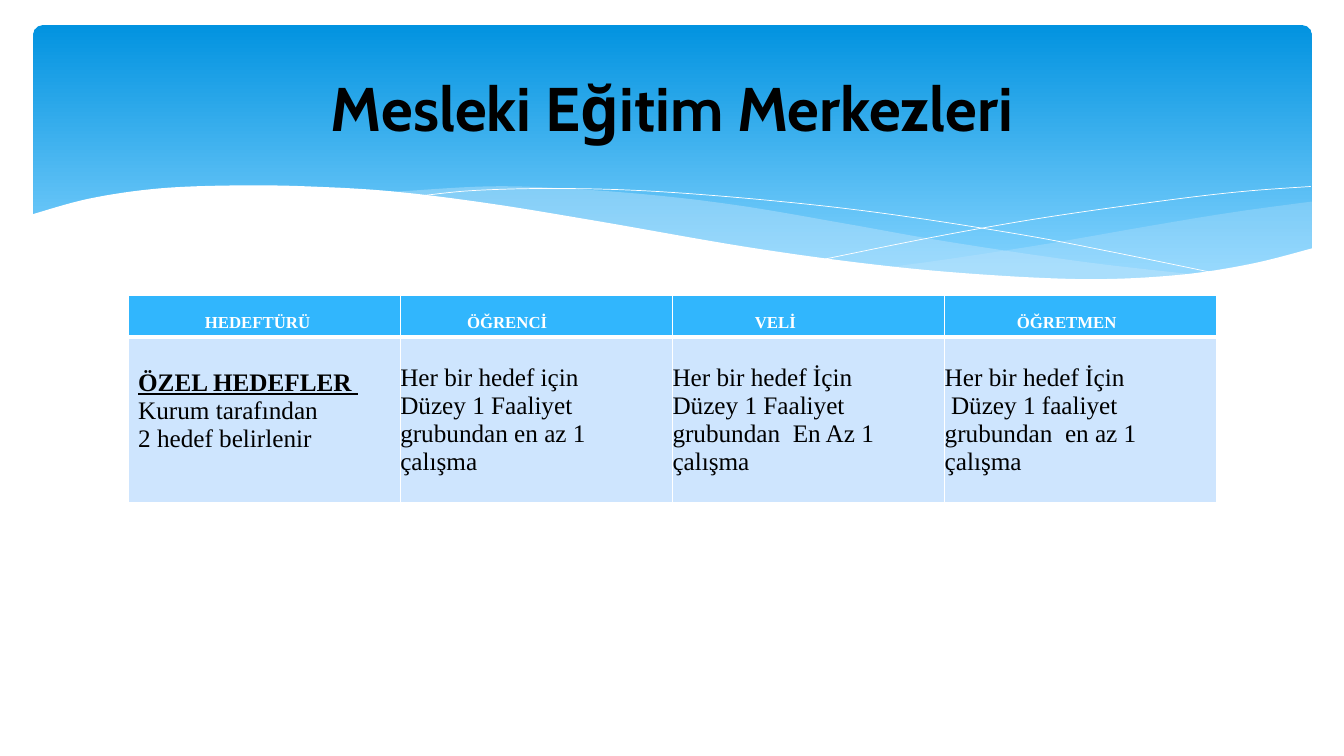
"""Build a slide with a wave banner, a title and a table of goals for vocational centres."""
import dataclasses
import typing

import lxml.etree
import pptx
import pptx.dml.color
import pptx.enum.dml
import pptx.enum.shapes
import pptx.enum.text
import pptx.oxml.ns
import pptx.util

Inches = pptx.util.Inches
Curve = list[tuple[float, float]]
WHITE, BLACK = "FFFFFF", "000000"
HEADER_BLUE, BODY_BLUE, MIST = "31B6FD", "CEE5FE", "C6E7FC"
SERIF = "Times New Roman"
CURVE_STEPS = 8


@dataclasses.dataclass
class Wave:
    curves: list[Curve]
    fill: str | None = None
    opacity: int = 100


@dataclasses.dataclass
class Column:
    heading: str
    heading_right: float
    lines: list[str]
    body_left: float = 0
    body_top: float = 0.27
    lead_bold: bool = False


WAVES = [
    Wave([
        [(13.01, 2), (12.27, 2.1), (11.47, 2.23), (10.38, 2.42), (9.41, 2.57), (8.82, 2.65)],
        [(8.82, 2.65), (9.58, 2.72), (10.41, 2.77), (11.13, 2.77), (11.86, 2.72),
         (12.47, 2.62), (13.01, 2.47)],
    ], MIST, 29),
    Wave([
        [(11.9, 2.73), (10.76, 2.6), (9.41, 2.4), (8.39, 2.22), (7.4, 2.05), (6.52, 1.94),
         (5.6, 1.87), (4.82, 1.85), (3.82, 1.91)],
        [(3.82, 1.91), (4.83, 2.03), (5.99, 2.22), (7.06, 2.4), (8.02, 2.55), (9.07, 2.68),
         (9.98, 2.76), (10.9, 2.78), (11.9, 2.73)],
    ], MIST, 40),
    Wave([[(4.12, 1.95), (4.7, 1.89), (5.55, 1.87), (6.52, 1.9), (7.75, 2), (8.86, 2.13),
           (10.14, 2.33), (11.08, 2.51), (12.1, 2.72)]]),
    Wave([[(8.18, 2.57), (9.27, 2.35), (10.35, 2.16), (11.55, 1.99), (12.32, 1.9), (13, 1.85)]]),
    Wave([
        [(13.03, 2.46), (12.4, 2.62), (11.67, 2.73), (10.78, 2.77), (9.69, 2.72), (8.63, 2.62),
         (7.4, 2.45), (5.96, 2.2), (4.86, 2.02), (3.9, 1.9), (3.06, 1.85), (2.35, 1.84),
         (1.58, 1.87), (0.89, 1.97), (0.31, 2.13)],
        [(0.31, 3.29)],
        [(13.03, 3.29)],
    ], WHITE),
]

COLUMNS = [
    Column("HEDEFTÜRÜ", 0.13, ["ÖZEL HEDEFLER ", "Kurum tarafından", "2 hedef belirlenir"],
           0.1, 0.32, True),
    Column("ÖĞRENCİ", 0.58, ["Her bir hedef için", "Düzey 1 Faaliyet grubundan en az 1 çalışma"]),
    Column("VELİ", 0.66, ["Her bir hedef İçin", "Düzey 1 Faaliyet grubundan  En Az 1 çalışma"]),
    Column("ÖĞRETMEN", 0.28,
           ["Her bir hedef İçin", " Düzey 1 faaliyet grubundan  en az 1 çalışma"]),
]


def color(code: str) -> pptx.dml.color.RGBColor:
    return pptx.dml.color.RGBColor.from_string(code)


def add_node(parent: typing.Any, tag: str, **attributes: str) -> typing.Any:
    return lxml.etree.SubElement(parent, pptx.oxml.ns.qn(tag), attributes)


def write(para: typing.Any, text: str, *, size: float, font: str = SERIF, tint: str = BLACK,
          bold: bool = False, underline: bool = False, centered: bool = False) -> None:
    align = pptx.enum.text.PP_ALIGN
    para.alignment = align.CENTER if centered else align.LEFT
    span = para.add_run()
    span.text = text
    span.font.size = pptx.util.Pt(size)
    span.font.name = font
    span.font.bold = bold
    span.font.underline = underline
    span.font.color.rgb = color(tint)


def smooth(points: Curve) -> Curve:
    padded = [points[0], *points, points[-1]]
    result = [points[0]]
    for before, start, end, after in zip(padded, padded[1:], padded[2:], padded[3:]):
        for step in range(1, CURVE_STEPS + 1):
            t = step / CURVE_STEPS
            x, y = (
                (2 * b + (c - a) * t + (2 * a - 5 * b + 4 * c - d) * t ** 2
                 + (3 * b - a - 3 * c + d) * t ** 3) / 2
                for a, b, c, d in zip(before, start, end, after)
            )
            result.append((x, y))
    return result


def draw_wave(page: typing.Any, wave: Wave) -> None:
    points = [(Inches(x), Inches(y)) for curve in wave.curves for x, y in smooth(curve)]
    builder = page.shapes.build_freeform(*points[0])
    builder.add_line_segments(points[1:], close=wave.fill is not None)
    shape = builder.convert_to_shape()
    shape.shadow.inherit = False
    if wave.fill is None:
        shape.fill.background()
        shape.line.color.rgb = color(WHITE)
        shape.line.width = pptx.util.Pt(0.5)
        return
    shape.line.fill.background()
    shape.fill.solid()
    shape.fill.fore_color.rgb = color(wave.fill)
    for tone in shape.fill._xPr.iterfind(".//" + pptx.oxml.ns.qn("a:srgbClr")):
        add_node(tone, "a:alpha", val=str(wave.opacity * 1000))


def draw_banner(page: typing.Any) -> None:
    banner = page.shapes.add_shape(pptx.enum.shapes.MSO_SHAPE.ROUNDED_RECTANGLE,
                                   Inches(0.33), Inches(0.25), Inches(12.68), Inches(2.7))
    banner.adjustments[0] = 0.034
    banner.shadow.inherit = False
    banner.line.fill.background()
    banner.fill.gradient()
    banner.fill.gradient_angle = 270
    stops = banner.fill.gradient_stops
    for stop, position, tint in zip(stops, (0, 0.9), ("0293E0", "83D3FE")):
        stop.position = position
        stop.color.rgb = color(tint)
    for wave in WAVES:
        draw_wave(page, wave)


def style_cell(cell: typing.Any, fill: str, *, left: float = 0, right: float = 0,
               top: float = 0, border_top: int = 1, border_bottom: int = 1) -> None:
    cell.margin_left, cell.margin_right = Inches(left), Inches(right)
    cell.margin_top, cell.margin_bottom = Inches(top), 0
    cell.vertical_anchor = pptx.enum.text.MSO_ANCHOR.TOP
    properties = cell._tc.get_or_add_tcPr()
    for side, width in zip("LRTB", (1, 1, border_top, border_bottom)):
        border = add_node(properties, f"a:ln{side}", w=str(pptx.util.Pt(width)))
        add_node(add_node(border, "a:solidFill"), "a:srgbClr", val=WHITE)
    cell.fill.solid()
    cell.fill.fore_color.rgb = color(fill)


def draw_table(page: typing.Any) -> None:
    frame = page.shapes.add_table(2, len(COLUMNS), Inches(1.27), Inches(2.93),
                                  Inches(10.8), Inches(2.06))
    table = frame.table
    table.horz_banding = False
    table.rows[0].height, table.rows[1].height = Inches(0.41), Inches(1.65)
    for index, column in enumerate(COLUMNS):
        heading, body = table.cell(0, index), table.cell(1, index)
        style_cell(heading, HEADER_BLUE, right=column.heading_right, top=0.18, border_bottom=3)
        write(heading.text_frame.paragraphs[0], column.heading, size=12, tint=WHITE,
              bold=True, centered=True)
        style_cell(body, BODY_BLUE, left=column.body_left, right=0.2, top=column.body_top,
                   border_top=3)
        for number, line in enumerate(column.lines):
            box = body.text_frame
            para = box.add_paragraph() if number else box.paragraphs[0]
            lead = column.lead_bold and number == 0
            write(para, line, size=18, bold=lead, underline=lead)


def place_title(page: typing.Any) -> None:
    title = page.shapes.title
    title.left, title.top = Inches(0.67), Inches(0.37)
    title.width, title.height = Inches(12), Inches(1.37)
    title.text_frame.vertical_anchor = pptx.enum.text.MSO_ANCHOR.MIDDLE
    write(title.text_frame.paragraphs[0], "Mesleki Eğitim Merkezleri", size=44, font="Cabin",
          bold=True, centered=True)
    page.shapes._spTree.append(title._element)


def main() -> None:
    deck = pptx.Presentation()
    deck.slide_width, deck.slide_height = Inches(13.33), Inches(7.5)
    page = deck.slides.add_slide(deck.slide_layouts[5])
    draw_banner(page)
    draw_table(page)
    place_title(page)
    deck.save("out.pptx")


if __name__ == "__main__":
    main()
